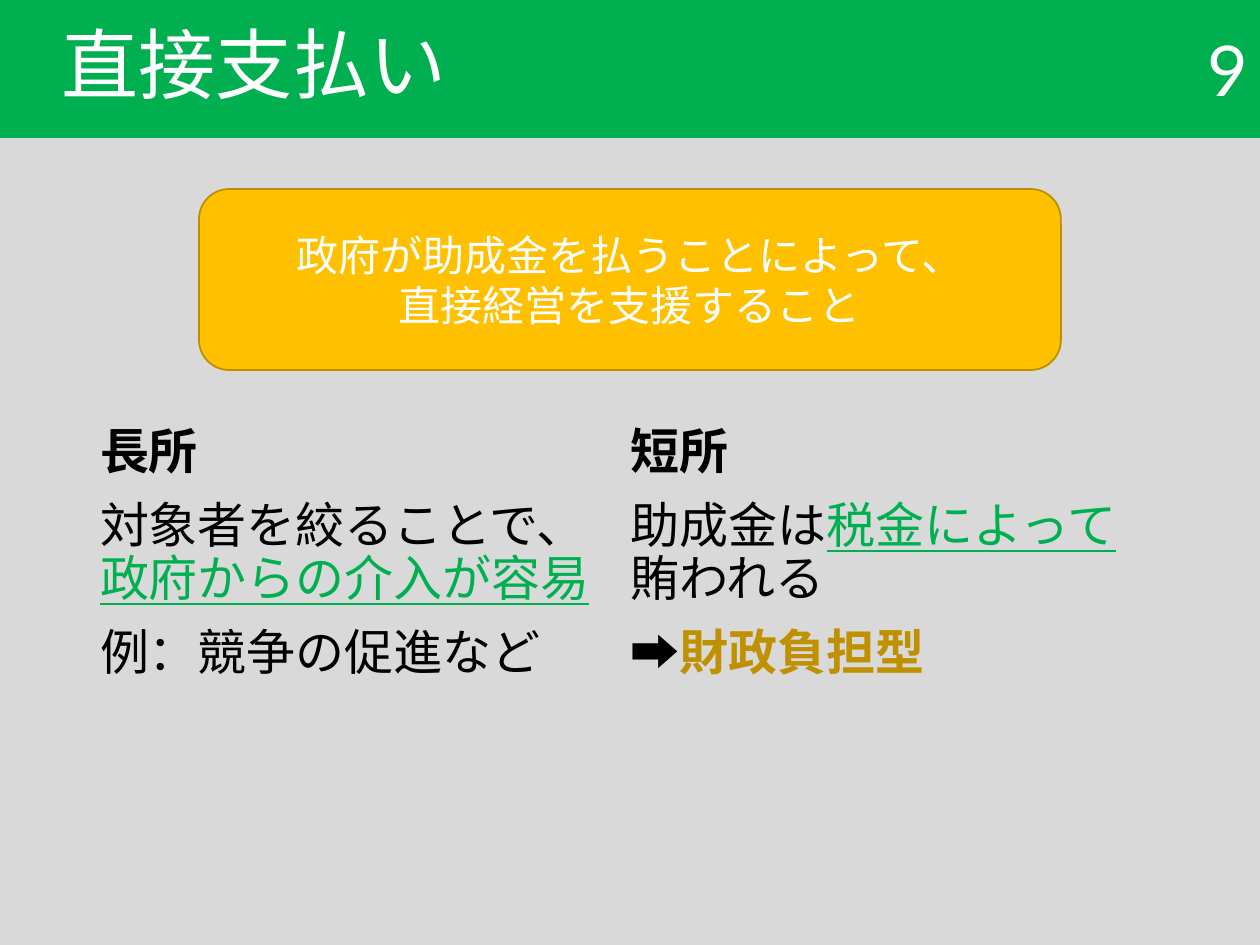
"""Build the slide on direct payments with their strengths and weaknesses."""
import pptx
import pptx.dml.color
import pptx.enum.shapes
import pptx.enum.text
import pptx.oxml
import pptx.util
from dataclasses import dataclass

TITLE = "直接支払い"
PAGE_NUMBER = "9"
DEFINITION = ["政府が助成金を払うことによって、", "直接経営を支援すること"]
COLUMNS = [
    [
        [("長所", "heading")],
        [("対象者を絞ることで、", "plain"), ("政府からの介入が容易", "key")],
        [("例：競争の促進など", "plain")],
    ],
    [
        [("短所", "heading")],
        [("助成金は", "plain"), ("税金によって", "key"), ("賄われる", "plain")],
        [("➡", "plain"), ("財政負担型", "result")],
    ],
]


@dataclass(frozen=True)
class Theme:
    """Colours, font and type sizes."""
    font: str = "Lato"
    background: str = "D9D9D9"
    green: str = "00B050"
    yellow: str = "FFC000"
    outline: str = "BD8E00"
    gold: str = "BF9000"
    black: str = "000000"
    white: str = "FFFFFF"
    title_size: int = 44
    number_size: int = 40
    body_size: int = 28
    definition_size: int = 24


THEME = Theme()
RUN_STYLES = {
    "heading": (THEME.black, True, False),
    "plain": (THEME.black, False, False),
    "key": (THEME.green, False, True),
    "result": (THEME.gold, True, False),
}
SCALE = 914400 // 126
SLIDE_WIDTH, SLIDE_HEIGHT = 1260, 945
HEADER_HEIGHT = 138
NUMBER_WIDTH = 244
TITLE_INDENT = 49
BODY_LEFT, BODY_TOP, COLUMN_WIDTH, BODY_HEIGHT = 100, 421, 531, 514
DEFINITION_WIDTH, DEFINITION_TOP, DEFINITION_HEIGHT = 862, 189, 181


def px(length):
    return pptx.util.Emu(length * SCALE)


def rgb(value):
    return pptx.dml.color.RGBColor.from_string(value)


def fill(target, colour):
    target.fill.solid()
    target.fill.fore_color.rgb = rgb(colour)


def place(shape, left, top, width, height):
    shape.left, shape.top, shape.width, shape.height = map(px, (left, top, width, height))


def set_font(paragraph, size, colour):
    paragraph.font.name = THEME.font
    paragraph.font.size = pptx.util.Pt(size)
    paragraph.font.color.rgb = rgb(colour)


def write_lines(shape, lines, size, colour, alignment):
    frame = shape.text_frame
    frame.word_wrap = True
    frame.auto_size = pptx.enum.text.MSO_AUTO_SIZE.NONE
    frame.vertical_anchor = pptx.enum.text.MSO_ANCHOR.MIDDLE
    frame.text = "\n".join(lines)
    for paragraph in frame.paragraphs:
        paragraph.alignment = alignment
        set_font(paragraph, size, colour)


def add_title(slide):
    title = slide.shapes.title
    place(title, 0, 0, SLIDE_WIDTH, HEADER_HEIGHT)
    fill(title, THEME.green)
    write_lines(title, [TITLE], THEME.title_size, THEME.white, pptx.enum.text.PP_ALIGN.LEFT)
    paragraph = title.text_frame.paragraphs[0]
    paragraph.line_spacing = 0.9
    paragraph._p.get_or_add_pPr().set("indent", str(px(TITLE_INDENT)))


def add_page_number(slide):
    box = slide.shapes.add_textbox(
        px(SLIDE_WIDTH - NUMBER_WIDTH), 0, px(NUMBER_WIDTH), px(HEADER_HEIGHT))
    write_lines(box, [PAGE_NUMBER], THEME.number_size, THEME.white, pptx.enum.text.PP_ALIGN.RIGHT)


def add_definition(slide):
    box = slide.shapes.add_shape(
        pptx.enum.shapes.MSO_SHAPE.ROUNDED_RECTANGLE,
        px((SLIDE_WIDTH - DEFINITION_WIDTH) // 2), px(DEFINITION_TOP),
        px(DEFINITION_WIDTH), px(DEFINITION_HEIGHT))
    box.shadow.inherit = False
    fill(box, THEME.yellow)
    box.line.color.rgb = rgb(THEME.outline)
    box.line.width = pptx.util.Pt(1)
    write_lines(box, DEFINITION, THEME.definition_size, THEME.white,
                pptx.enum.text.PP_ALIGN.CENTER)


def fill_column(placeholder, index, paragraphs):
    place(placeholder, BODY_LEFT + index * COLUMN_WIDTH, BODY_TOP, COLUMN_WIDTH, BODY_HEIGHT)
    frame = placeholder.text_frame
    frame.auto_size = pptx.enum.text.MSO_AUTO_SIZE.NONE
    frame.margin_left = frame.margin_right = 0
    for number, runs in enumerate(paragraphs):
        paragraph = frame.add_paragraph() if number else frame.paragraphs[0]
        paragraph.line_spacing = 0.9
        paragraph.space_before = pptx.util.Pt(12)
        set_font(paragraph, THEME.body_size, THEME.black)
        properties = paragraph._p.get_or_add_pPr()
        properties.set("marL", "0")
        properties.set("indent", "0")
        bullet = pptx.oxml.parse_xml(
            '<a:buNone xmlns:a="http://schemas.openxmlformats.org/drawingml/2006/main"/>')
        properties.insert_element_before(bullet, "a:tabLst", "a:defRPr", "a:extLst")
        for text, style in runs:
            colour, bold, underline = RUN_STYLES[style]
            run = paragraph.add_run()
            run.text = text
            run.font.color.rgb = rgb(colour)
            run.font.bold = bold
            run.font.underline = underline


def main():
    presentation = pptx.Presentation()
    presentation.slide_width, presentation.slide_height = px(SLIDE_WIDTH), px(SLIDE_HEIGHT)
    slide = presentation.slides.add_slide(presentation.slide_layouts.get_by_name("Two Content"))
    fill(slide.background, THEME.background)
    add_title(slide)
    bodies = list(slide.placeholders)[1:]
    for index, (placeholder, paragraphs) in enumerate(zip(bodies, COLUMNS)):
        fill_column(placeholder, index, paragraphs)
    add_page_number(slide)
    add_definition(slide)
    presentation.save("out.pptx")


if __name__ == "__main__":
    main()
